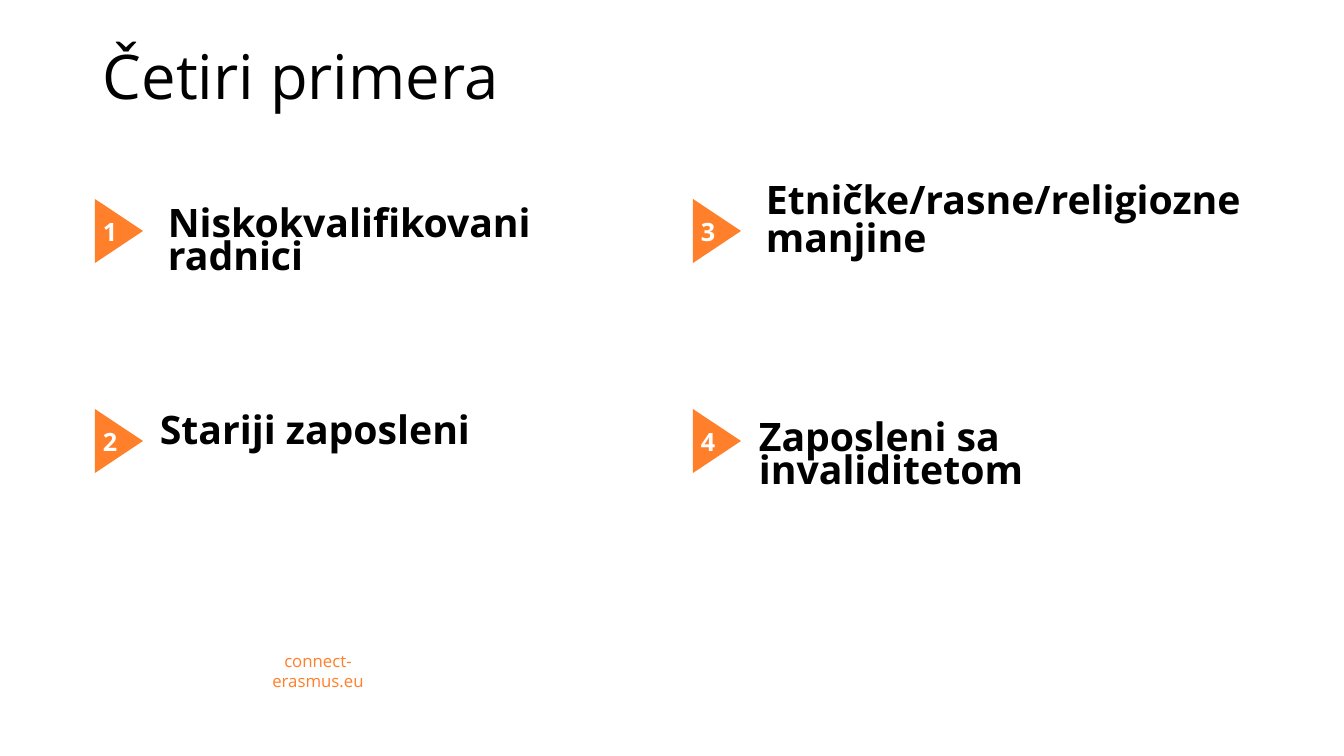
import pptx
import pptx.dml.color
import pptx.enum.shapes
import pptx.enum.text
import pptx.util

ANCHOR = pptx.enum.text.MSO_ANCHOR
ALIGN = pptx.enum.text.PP_ALIGN
TRIANGLE = pptx.enum.shapes.MSO_SHAPE.ISOSCELES_TRIANGLE

BLACK, WHITE, ORANGE = "000000", "FFFFFF", "FF7F2A"
PX = 914400 / 100.8
SLIDE_SIZE = (1344, 756)

TITLE = ("Četiri primera", (93, 32, 1159, 86))
FOOTER = ("connect-erasmus.eu", (230, 656, 176, 30))
EXAMPLES = [
    ("Niskokvalifikovani radnici", (158, 205, 503, 51), 0.72),
    ("Stariji zaposleni", (150, 409, 503, 89), 0.81),
    ("Etničke/rasne/religiozne manjine", (756, 179, 503, 101), 0.81),
    ("Zaposleni sa invaliditetom", (749, 419, 503, 51), 0.72),
]
ROWS = 2
MARKER_ORIGIN = (87, 207)
MARKER_PITCH = (598, 210)
MARKER_SIZE = (64, 48)
NUMBER_OFFSET = (6, 4)
NUMBER_SIZE = (35, 40)


def emu(lengths):
    return [pptx.util.Emu(round(length * PX)) for length in lengths]


def color(value):
    return pptx.dml.color.RGBColor.from_string(value)


def apply(target, values):
    for name, value in values.items():
        setattr(target, name, value)


def add_text(slide, text, box, size, text_color, bold=False, frame_format=None, paragraph_format=None):
    frame = slide.shapes.add_textbox(*emu(box)).text_frame
    apply(frame, {"word_wrap": True, **(frame_format or {})})
    paragraph = frame.paragraphs[0]
    paragraph.text = text
    apply(paragraph, paragraph_format or {})
    font = paragraph.runs[0].font
    apply(font, {"name": "Open Sans", "size": pptx.util.Pt(size), "bold": bold})
    font.color.rgb = color(text_color)


def add_marker(slide, index):
    column, row = divmod(index, ROWS)
    left = MARKER_ORIGIN[0] + column * MARKER_PITCH[0]
    top = MARKER_ORIGIN[1] + row * MARKER_PITCH[1]
    triangle = slide.shapes.add_shape(TRIANGLE, *emu((left, top, *MARKER_SIZE)))
    triangle.rotation = 90
    triangle.shadow.inherit = False
    triangle.fill.solid()
    triangle.fill.fore_color.rgb = color(ORANGE)
    triangle.line.fill.background()
    box = (left + NUMBER_OFFSET[0], top + NUMBER_OFFSET[1], *NUMBER_SIZE)
    add_text(slide, str(index + 1), box, 18, WHITE, True, {"word_wrap": False})


def main():
    presentation = pptx.Presentation()
    width, height = emu(SLIDE_SIZE)
    apply(presentation, {"slide_width": width, "slide_height": height})
    slide = presentation.slides.add_slide(presentation.slide_layouts[6])

    add_text(slide, *TITLE, 44, BLACK, False,
             {"vertical_anchor": ANCHOR.BOTTOM}, {"line_spacing": 0.9})
    add_text(slide, *FOOTER, 12, ORANGE, False,
             {"vertical_anchor": ANCHOR.MIDDLE}, {"alignment": ALIGN.CENTER})
    for index, (text, box, spacing) in enumerate(EXAMPLES):
        add_text(slide, text, box, 28, BLACK, True, None, {"line_spacing": spacing})
        add_marker(slide, index)

    presentation.save("out.pptx")


if __name__ == "__main__":
    main()
